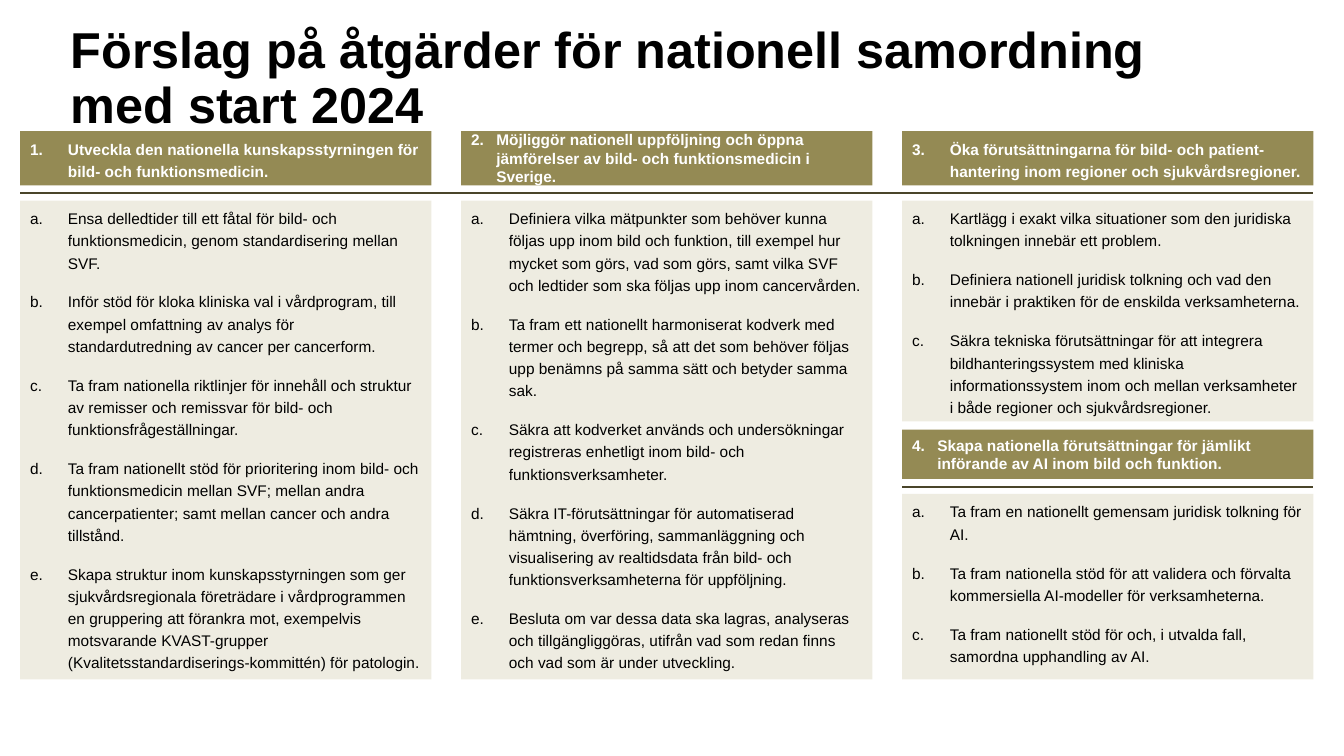
from pptx import Presentation
from pptx.dml.color import RGBColor
from pptx.enum.shapes import MSO_CONNECTOR, MSO_SHAPE
from pptx.enum.text import MSO_ANCHOR as ANCHOR, MSO_AUTO_SIZE as AUTO, PP_ALIGN as ALIGN
from pptx.oxml.ns import qn
from pptx.util import Pt
from lxml.etree import SubElement

COLORS = {"header": "948A54", "body": "EEECE1", "rule": "4A452A",
          "dark": "000000", "light": "FFFFFF"}
LEFT, STEP, WIDTH = 14.4, 315, 293.8
COLUMNS = [LEFT + i * STEP for i in range(3)]
RIGHT = COLUMNS[-1] + WIDTH
HEADER_TOP, HEADER_H = 93.6, 38.9
BODY_TOP, BODY_H = 143.3, 342

TITLE = "Förslag på åtgärder för nationell samordning med start 2024"
HEADERS = [
    "Utveckla den nationella kunskapsstyrningen för bild- och funktionsmedicin.",
    "Möjliggör nationell uppföljning och öppna jämförelser av bild- och funktionsmedicin i Sverige.",
    "Öka förutsättningarna för bild- och patient-hantering inom regioner och sjukvårdsregioner.",
    "Skapa nationella förutsättningar för jämlikt införande av AI inom bild och funktion.",
]
ACTIONS = [
    [
        "Ensa delledtider till ett fåtal för bild- och funktionsmedicin, genom "
        "standardisering mellan SVF.",
        "Inför stöd för kloka kliniska val i vårdprogram, till exempel omfattning av "
        "analys för standardutredning av cancer per cancerform.",
        "Ta fram nationella riktlinjer för innehåll och struktur av remisser och "
        "remissvar för bild- och funktionsfrågeställningar.",
        "Ta fram nationellt stöd för prioritering inom bild- och funktionsmedicin mellan "
        "SVF; mellan andra cancerpatienter; samt mellan cancer och andra tillstånd.",
        "Skapa struktur inom kunskapsstyrningen som ger sjukvårdsregionala företrädare i "
        "vårdprogrammen en gruppering att förankra mot, exempelvis motsvarande "
        "KVAST-grupper (Kvalitetsstandardiserings-kommittén) för patologin.",
    ],
    [
        "Definiera vilka mätpunkter som behöver kunna följas upp inom bild och funktion, "
        "till exempel hur mycket som görs, vad som görs, samt vilka SVF och ledtider som "
        "ska följas upp inom cancervården.",
        "Ta fram ett nationellt harmoniserat kodverk med termer och begrepp, så att det "
        "som behöver följas upp benämns på samma sätt och betyder samma sak.",
        "Säkra att kodverket används och undersökningar registreras enhetligt inom bild- "
        "och funktionsverksamheter.",
        "Säkra IT-förutsättningar för automatiserad hämtning, överföring, sammanläggning "
        "och visualisering av realtidsdata från bild- och funktionsverksamheterna för "
        "uppföljning.",
        "Besluta om var dessa data ska lagras, analyseras och tillgängliggöras, utifrån "
        "vad som redan finns och vad som är under utveckling.",
    ],
    [
        "Kartlägg i exakt vilka situationer som den juridiska tolkningen innebär ett problem.",
        "Definiera nationell juridisk tolkning och vad den innebär i praktiken för de "
        "enskilda verksamheterna.",
        "Säkra tekniska förutsättningar för att integrera bildhanteringssystem med "
        "kliniska informationssystem inom och mellan verksamheter i både regioner och "
        "sjukvårdsregioner.",
    ],
    [
        "Ta fram en nationellt gemensam juridisk tolkning för AI.",
        "Ta fram nationella stöd för att validera och förvalta kommersiella AI-modeller "
        "för verksamheterna.",
        "Ta fram nationellt stöd för och, i utvalda fall, samordna upphandling av AI.",
    ],
]


def rgb(name):
    return RGBColor.from_string(COLORS[name])


def add_number(p, scheme, start, indent):
    """Give the paragraph automatic numbering with a hanging indent."""
    pPr = p._p.get_or_add_pPr()
    pPr.set("marL", str(Pt(indent)))
    pPr.set("indent", str(-Pt(indent)))
    num = SubElement(pPr, qn("a:buAutoNum"), type=scheme)
    if start > 1:
        num.set("startAt", str(start))


def write(tf, texts, size=11, color="dark", bold=False, scheme=None, start=1,
          indent=27, spacing=1.2, before=0, anchor=ANCHOR.TOP):
    tf.word_wrap = True
    tf.auto_size = AUTO.NONE
    tf.vertical_anchor = anchor
    for i, text in enumerate(texts):
        p = tf.add_paragraph() if i else tf.paragraphs[0]
        if scheme:
            add_number(p, scheme, start, indent)
        p.alignment = ALIGN.LEFT
        p.line_spacing = spacing
        p.space_before = Pt(before if i else 0)
        r = p.add_run()
        r.text = text
        r.font.name = "Arial"
        r.font.size = Pt(size)
        r.font.bold = bold
        r.font.color.rgb = rgb(color)


def add_panel(s, x, y, h, fill, texts, **fmt):
    sp = s.shapes.add_shape(MSO_SHAPE.RECTANGLE, Pt(x), Pt(y), Pt(WIDTH), Pt(h))
    sp.shadow.inherit = False
    sp.fill.solid()
    sp.fill.fore_color.rgb = rgb(fill)
    sp.line.fill.background()
    write(sp.text_frame, texts, **fmt)


def add_header(s, x, y, h, number, **fmt):
    add_panel(s, x, y, h, "header", [HEADERS[number - 1]], color="light", bold=True,
              scheme="arabicPeriod", start=number, anchor=ANCHOR.MIDDLE, **fmt)


def add_actions(s, x, y, h, number, **fmt):
    add_panel(s, x, y, h, "body", ACTIONS[number - 1], scheme="alphaLcPeriod",
              before=12, **fmt)


def add_rule(s, x, y):
    line = s.shapes.add_connector(MSO_CONNECTOR.STRAIGHT, Pt(x), Pt(y), Pt(RIGHT), Pt(y))
    line.line.color.rgb = rgb("rule")
    line.line.width = Pt(1.5)
    SubElement(line._element.spPr, qn("a:effectLst"))


def add_title(s):
    title = s.shapes.title
    title.left, title.top, title.width, title.height = Pt(43.2), Pt(20.2), Pt(844.6), Pt(73.4)
    write(title.text_frame, [TITLE], size=36, bold=True, spacing=0.9, anchor=ANCHOR.MIDDLE)


def main():
    prs = Presentation()
    prs.slide_width, prs.slide_height = Pt(960), Pt(540)
    s = prs.slides.add_slide(prs.slide_layouts[5])
    add_title(s)

    compact = {"indent": 18, "spacing": 1.0}
    first, second, third = COLUMNS
    add_header(s, first, HEADER_TOP, HEADER_H, 1)
    add_header(s, second, HEADER_TOP, HEADER_H, 2, **compact)
    add_header(s, third, HEADER_TOP, HEADER_H, 3)
    add_rule(s, LEFT, 137.6)
    add_actions(s, first, BODY_TOP, BODY_H, 1)
    add_actions(s, second, BODY_TOP, BODY_H, 2)
    add_actions(s, third, BODY_TOP, 157.7, 3, anchor=ANCHOR.MIDDLE)

    add_header(s, third, 306.8, 35.3, 4, **compact)
    add_rule(s, third, 347.8)
    add_actions(s, third, 352.8, 132.5, 4)

    prs.save("out.pptx")


if __name__ == "__main__":
    main()
